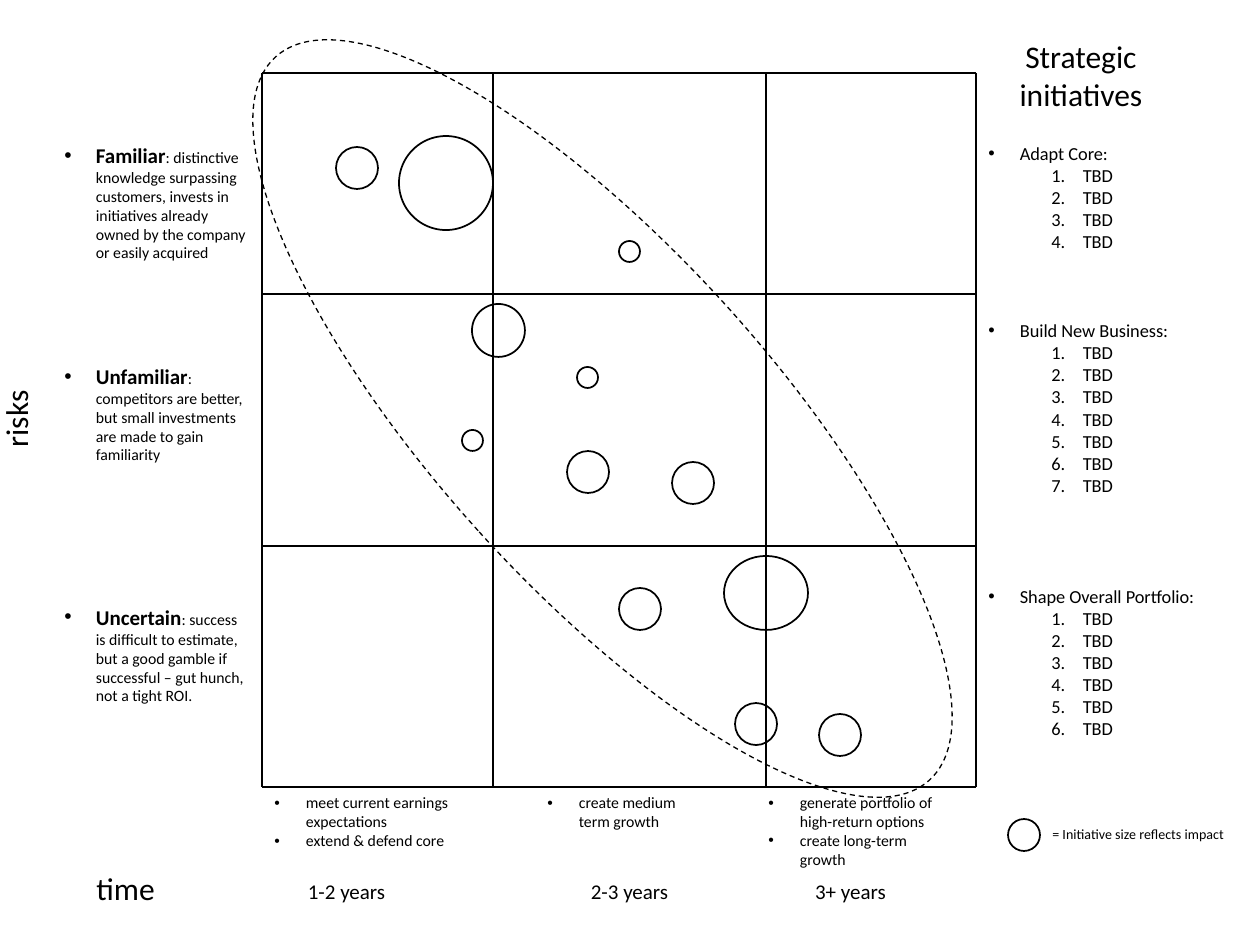
from lxml import etree
from pptx import Presentation
from pptx.dml.color import RGBColor
from pptx.enum.dml import MSO_LINE
from pptx.enum.shapes import MSO_CONNECTOR, MSO_SHAPE
from pptx.enum.text import MSO_AUTO_SIZE, PP_ALIGN
from pptx.oxml.ns import qn
from pptx.util import Pt

PX = 914400 / 126
LINE, OVAL, DASH = MSO_CONNECTOR.STRAIGHT, MSO_SHAPE.OVAL, MSO_LINE.DASH
LEFT, MID = PP_ALIGN.LEFT, PP_ALIGN.CENTER
GROW = MSO_AUTO_SIZE.SHAPE_TO_FIT_TEXT
BLACK = RGBColor.from_string("000000")

deck = Presentation()
deck.slide_width, deck.slide_height = round(1260 * PX), round(945 * PX)
slide = deck.slides.add_slide(deck.slide_layouts[6])
shapes = slide.shapes


def ink(shape, width):
    """Give a shape or connector a plain black line without shadow."""
    shape.line.color.rgb = BLACK
    shape.line.width = Pt(width)
    etree.SubElement(shape.element.spPr, qn("a:effectLst"))


def write(text, x, y, w, h, size=9, align=LEFT, lead="", mark=False, gaps=None, turn=0):
    """Add a text box; with mark, lines are bulleted, or numbered after a tab."""
    box = shapes.add_textbox(*[round(v * PX) for v in (x, y, w, h)])
    box.rotation = turn
    frame = box.text_frame
    frame.word_wrap, frame.auto_size = True, GROW
    for i, line in enumerate(text.split("\n")):
        para = frame.paragraphs[0] if i == 0 else frame.add_paragraph()
        para.alignment = align
        if gaps and i in gaps:
            para.space_before = Pt(gaps[i])
        step = line.startswith("\t")
        if mark:
            para.level = int(step)
            props = para._p.get_or_add_pPr()
            props.set("marL", "685800" if step else "228600")
            props.set("indent", "-228600")
            if step:
                etree.SubElement(props, qn("a:buAutoNum"), type="arabicPeriod")
            else:
                etree.SubElement(props, qn("a:buFont"), typeface="Arial")
                etree.SubElement(props, qn("a:buChar"), char="•")
        for words, points, bold in ((lead, 12, True), (line.strip(), size, False)):
            if words:
                run = para.add_run()
                run.text = words
                run.font.name, run.font.size = "Calibri", Pt(points)
                run.font.bold, run.font.color.rgb = bold, BLACK


# Grid
cols, rows = (262, 493, 766, 976), (73, 294, 546, 787)
ends = [(x, rows[0], x, rows[-1]) for x in cols]
ends += [(cols[0], y, cols[-1], y) for y in rows]
for end in ends:
    ink(shapes.add_connector(LINE, *[round(v * PX) for v in end]), 0.75)

# Axis names
write("time", 73, 863, 105, 50, size=18, align=MID)
write("risks", -37, 394, 105, 50, size=18, align=MID, turn=270)

# Time columns
for x, w, h, goals, left, years in (
    (262, 210, 71, "meet current earnings expectations\nextend & defend core", 294, "1-2 years"),
    (535, 179, 50, "create medium term growth", 577, "2-3 years"),
    (756, 210, 89, "generate portfolio of high-return options\ncreate long-term growth",
     798, "3+ years"),
):
    write(goals, x, 787, w, h, mark=True)
    write(years, left, 872, 105, 38, size=12, align=MID)

# Risk rows
for y, h, name, note in (
    (136, 134, "Familiar", ": distinctive knowledge surpassing customers, invests in "
     "initiatives already owned by the company or easily acquired"),
    (357, 115, "Unfamiliar", ": competitors are better, but small investments "
     "are made to gain familiarity"),
    (598, 115, "Uncertain", ": success is difficult to estimate, but a good gamble "
     "if successful – gut hunch, not a tight ROI."),
):
    write(note, 52, y, 210, h, lead=name, mark=True)

# Strategic initiatives
plans = (("Adapt Core:", 4), ("Build New Business:", 7), ("Shape Overall Portfolio:", 6))
items = "\n".join(name + "\n\tTBD" * count for name, count in plans)
write(items, 976, 136, 262, 636, size=10.5, mark=True, gaps={5: 38.4, 13: 51.2})
write("Strategic initiatives", 955, 31, 252, 89, size=18, align=MID)

# Legend text
write("= Initiative size reflects impact", 1040, 819, 199, 30, size=8)

# Legend circle, initiative bubbles, then the dashed band
for x, y, w, h in (
    (1008, 819, 32, 32), (336, 147, 42, 42), (399, 136, 94, 94),
    (577, 367, 21, 21), (462, 430, 21, 21), (567, 451, 42, 42),
    (472, 304, 53, 53), (672, 462, 42, 42), (619, 588, 42, 42),
    (724, 556, 84, 74), (735, 703, 42, 42), (819, 714, 42, 42),
    (619, 241, 21, 21), (435, -69, 335, 975),
):
    ring = shapes.add_shape(OVAL, *[round(v * PX) for v in (x, y, w, h)])
    ring.fill.background()
    band = h > 900
    ink(ring, 0.75 if band else 1)
    if band:
        ring.rotation = 317.9
        ring.line.dash_style = DASH

deck.save("out.pptx")
